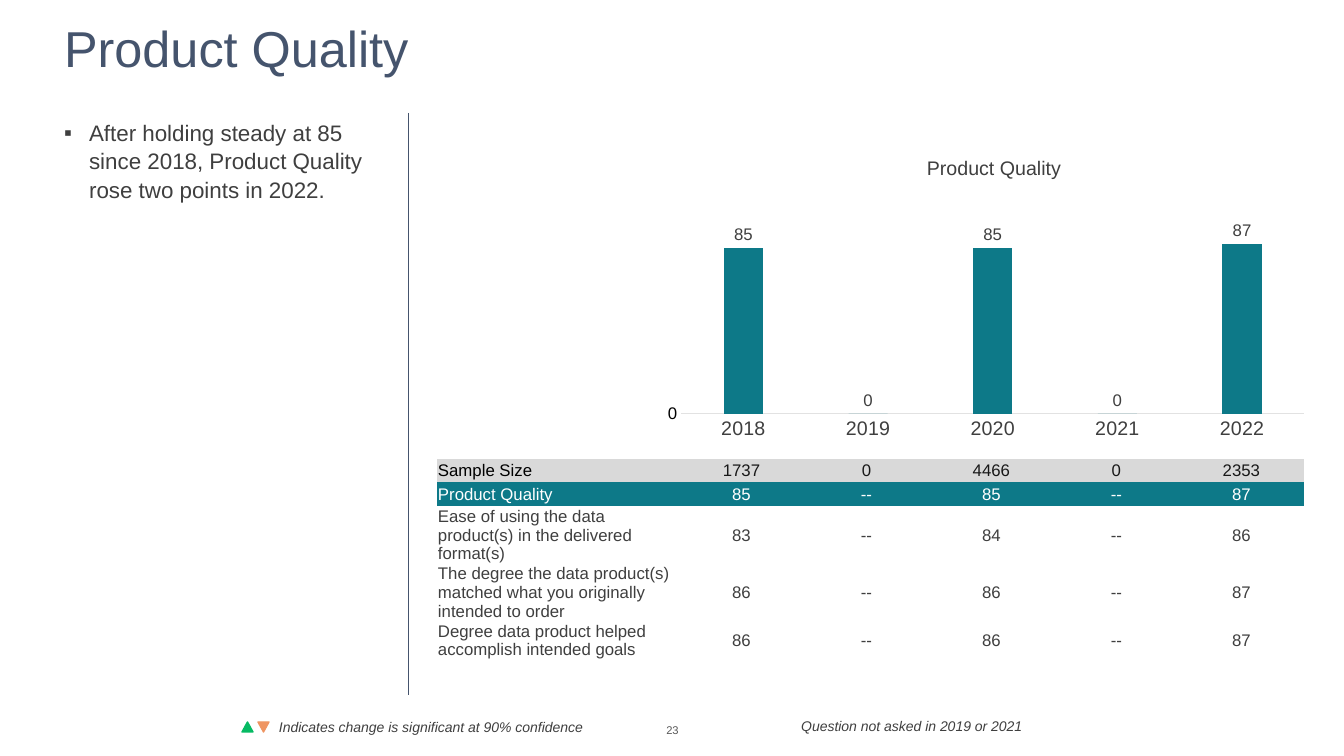
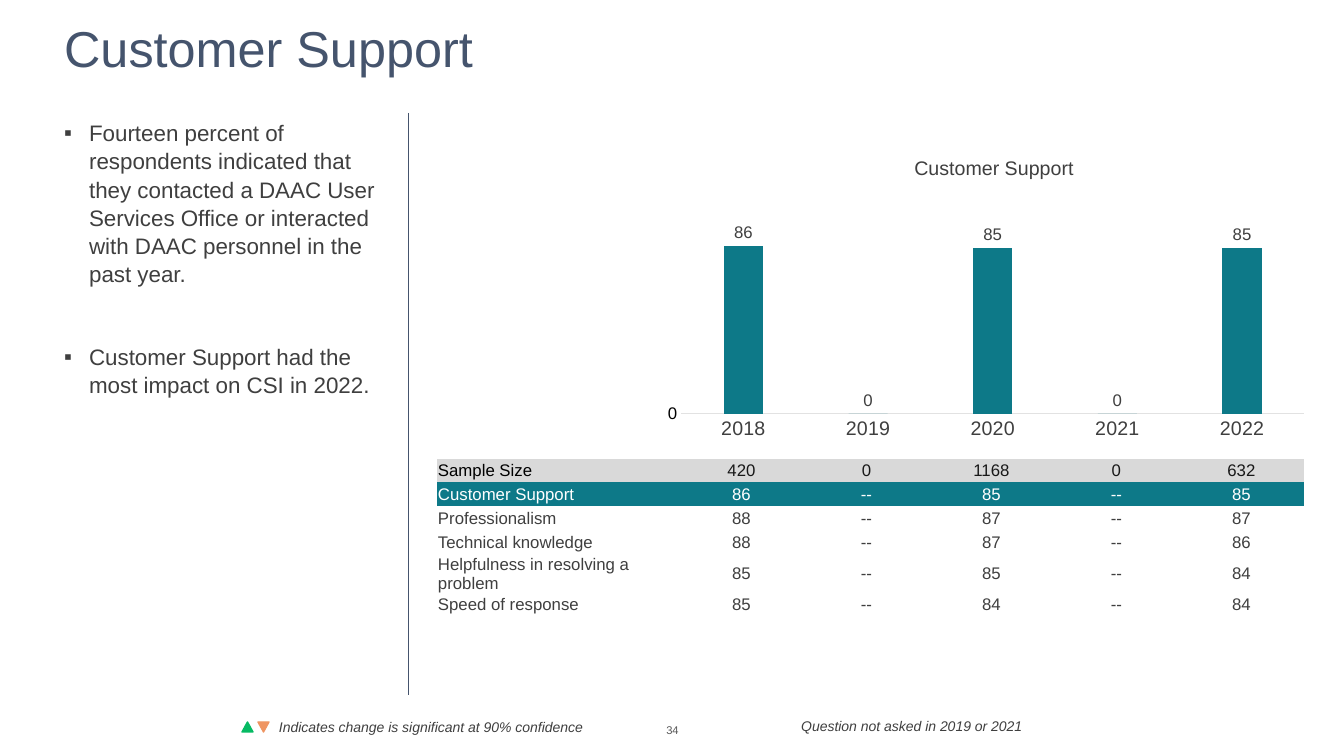
from lxml import etree
from pptx import Presentation
from pptx.chart.data import CategoryChartData
from pptx.dml.color import RGBColor
from pptx.enum.chart import XL_CHART_TYPE, XL_LABEL_POSITION, XL_TICK_MARK
from pptx.enum.shapes import MSO_CONNECTOR, MSO_SHAPE
from pptx.enum.text import MSO_ANCHOR, MSO_AUTO_SIZE, PP_ALIGN
from pptx.oxml.ns import qn
from pptx.util import Emu, Pt

COLUMN = XL_CHART_TYPE.COLUMN_CLUSTERED
OUTSIDE_END = XL_LABEL_POSITION.OUTSIDE_END
NO_TICK = XL_TICK_MARK.NONE
STRAIGHT = MSO_CONNECTOR.STRAIGHT
TRIANGLE = MSO_SHAPE.ISOSCELES_TRIANGLE
MIDDLE, TOP = MSO_ANCHOR.MIDDLE, MSO_ANCHOR.TOP
NO_AUTOFIT = MSO_AUTO_SIZE.NONE
LEFT, CENTER, RIGHT = PP_ALIGN.LEFT, PP_ALIGN.CENTER, PP_ALIGN.RIGHT

FONT = "Arial"
SLATE = RGBColor(0x45, 0x54, 0x6D)
CHARCOAL = RGBColor(0x3F, 0x3F, 0x3F)
GRAY = RGBColor(0x59, 0x59, 0x59)
LIGHT_GRAY = RGBColor(0xD9, 0xD9, 0xD9)
AXIS_GRAY = RGBColor(0xE2, 0xE2, 0xE2)
NEAR_BLACK = RGBColor(0x18, 0x18, 0x18)
BLACK = RGBColor(0, 0, 0)
WHITE = RGBColor(0xFF, 0xFF, 0xFF)
TEAL = RGBColor(0x0D, 0x79, 0x88)
GREEN = RGBColor(0x06, 0xBA, 0x63)
ORANGE = RGBColor(0xEF, 0x95, 0x62)

PX_PER_INCH = 100.8
YEARS = ["2018", "2019", "2020", "2021", "2022"]
PLOT_AREA = {"x": 0.29, "y": 0.295, "w": 0.65, "h": 0.48}
PLAIN_TABLE_STYLE = "{2D5ABB26-0587-4C30-8999-92F81FD0307C}"
LABEL_WIDTH, YEAR_WIDTH = 242, 125
SAMPLE_HEIGHT, SCORE_HEIGHT = 23, 24

TOPICS = [
    {
        "title": "Product Quality",
        "page": "23",
        "bullets": ["After holding steady at 85 since 2018, Product Quality rose two points in 2022."],
        "samples": (1737, 4466, 2353),
        "scores": (85, 85, 87),
        "details": [
            ("Ease of using the data product(s) in the delivered format(s)", (83, 84, 86)),
            ("The degree the data product(s) matched what you originally intended to order", (86, 86, 87)),
            ("Degree data product helped accomplish intended goals", (86, 86, 87)),
        ],
    },
    {
        "title": "Customer Support",
        "page": "34",
        "bullets": [
            "Fourteen percent of respondents indicated that they contacted a DAAC User Services Office "
            "or interacted with DAAC personnel in the past year.",
            "Customer Support had the most impact on CSI in 2022.",
        ],
        "samples": (420, 1168, 632),
        "scores": (86, 85, 85),
        "details": [
            ("Professionalism", (88, 87, 87)),
            ("Technical knowledge", (88, 87, 86)),
            ("Helpfulness in resolving a problem", (85, 85, 84)),
            ("Speed of response", (85, 84, 84)),
        ],
    },
]


def px(length):
    return Emu(round(length * 914400 / PX_PER_INCH))


def box(left, top, width, height):
    return px(left), px(top), px(width), px(height)


def every_year(values, missing):
    first, second, third = values
    return [first, missing, second, missing, third]


def style_font(font, size, color):
    font.name = FONT
    font.size = Pt(size)
    font.color.rgb = color


def add_run(paragraph, text, size, color, italic=False):
    run = paragraph.add_run()
    run.text = text
    style_font(run.font, size, color)
    if italic:
        run.font.italic = True


def add_text(slide, bounds, text, size, color=CHARCOAL, align=LEFT, italic=False):
    frame = slide.shapes.add_textbox(*box(*bounds)).text_frame
    frame.word_wrap = True
    paragraph = frame.paragraphs[0]
    paragraph.alignment = align
    add_run(paragraph, text, size, color, italic)


def prepare_layout(layout):
    places = ((54, 0, 1243, 102, MIDDLE), (54, 113, 347, 582, TOP))
    for placeholder, (*bounds, anchor) in zip(layout.placeholders, places):
        placeholder.left, placeholder.top, placeholder.width, placeholder.height = box(*bounds)
        placeholder.text_frame.vertical_anchor = anchor
        placeholder.text_frame.auto_size = NO_AUTOFIT


def fill_title(slide, text):
    paragraph = slide.shapes.title.text_frame.paragraphs[0]
    paragraph.alignment = LEFT
    paragraph.line_spacing = 0.9
    add_run(paragraph, text, 36, SLATE)


def add_bullet(paragraph):
    properties = paragraph._p.get_or_add_pPr()
    properties.set("marL", str(px(25)))
    properties.set("indent", str(-px(25)))
    color = etree.SubElement(properties, qn("a:buClr"))
    etree.SubElement(color, qn("a:srgbClr"), val=str(CHARCOAL))
    etree.SubElement(properties, qn("a:buFont"), typeface=FONT)
    etree.SubElement(properties, qn("a:buChar"), char="▪")


def fill_bullets(slide, bullets):
    frame = slide.placeholders[1].text_frame
    for index, text in enumerate(bullets):
        paragraph = frame.add_paragraph() if index else frame.paragraphs[0]
        add_bullet(paragraph)
        paragraph.line_spacing = 1.05
        paragraph.space_before = Pt(39 if index else 0)
        add_run(paragraph, text, 16, CHARCOAL)


def add_divider(slide):
    divider = slide.shapes.add_connector(STRAIGHT, px(408), px(113), px(408), px(695))
    divider.line.color.rgb = SLATE
    divider.line.width = Pt(0.5)
    etree.SubElement(divider.element.spPr, qn("a:effectLst"))


def place_plot(chart):
    plot_area = chart.element.find(".//" + qn("c:plotArea"))
    layout = plot_area.find(qn("c:layout"))
    if layout is None:
        layout = etree.Element(qn("c:layout"))
        plot_area.insert(0, layout)
    manual = etree.SubElement(layout, qn("c:manualLayout"))
    etree.SubElement(manual, qn("c:layoutTarget"), val="inner")
    for side in "xy":
        etree.SubElement(manual, qn(f"c:{side}Mode"), val="edge")
    for name, share in PLOT_AREA.items():
        etree.SubElement(manual, qn(f"c:{name}"), val=str(share))


def add_score_chart(slide, scores):
    data = CategoryChartData(number_format="0")
    data.categories = YEARS
    data.add_series("Series 1", every_year(scores, 0))
    chart = slide.shapes.add_chart(COLUMN, *box(403, 99, 959, 406), data).chart
    chart.has_legend = False
    chart.has_title = False
    style_font(chart.font, 12, CHARCOAL)
    place_plot(chart)

    plot = chart.plots[0]
    plot.vary_by_categories = False
    plot.gap_width = 219
    plot.overlap = -27
    fill = plot.series[0].format.fill
    fill.solid()
    fill.fore_color.rgb = TEAL
    plot.has_data_labels = True
    labels = plot.data_labels
    labels.show_value = True
    labels.position = OUTSIDE_END
    labels.number_format = "0"
    labels.number_format_is_linked = False
    style_font(labels.font, 12, CHARCOAL)

    years, values = chart.category_axis, chart.value_axis
    for axis, size, color in ((years, 14, CHARCOAL), (values, 12, BLACK)):
        axis.major_tick_mark = NO_TICK
        axis.minor_tick_mark = NO_TICK
        axis.has_major_gridlines = False
        style_font(axis.tick_labels.font, size, color)
    years.format.line.color.rgb = AXIS_GRAY
    years.format.line.width = Pt(0.75)
    values.format.line.fill.background()
    values.minimum_scale, values.maximum_scale, values.major_unit = 0, 100, 500
    values.tick_labels.number_format = "0"
    values.tick_labels.number_format_is_linked = False


def fill_cell(cell, text, color, background, align):
    cell.margin_left = cell.margin_top = cell.margin_right = px(1)
    cell.margin_bottom = 0
    cell.vertical_anchor = MIDDLE
    if background is None:
        cell.fill.background()
    else:
        cell.fill.solid()
        cell.fill.fore_color.rgb = background
    paragraph = cell.text_frame.paragraphs[0]
    paragraph.alignment = align
    add_run(paragraph, text, 12, color)


def add_score_table(slide, topic):
    rows = [
        ("Sample Size", every_year(topic["samples"], 0), BLACK, NEAR_BLACK, LIGHT_GRAY),
        (topic["title"], every_year(topic["scores"], "--"), WHITE, WHITE, TEAL),
    ]
    for label, scores in topic["details"]:
        rows.append((label, every_year(scores, "--"), CHARCOAL, CHARCOAL, None))
    widths = [LABEL_WIDTH] + [YEAR_WIDTH] * len(YEARS)
    heights = [SAMPLE_HEIGHT] + [SCORE_HEIGHT] * (len(rows) - 1)

    bounds = box(437, 459, sum(widths), sum(heights))
    graphic = slide.shapes.add_table(len(rows), len(widths), *bounds)
    graphic.element.find(".//" + qn("a:tableStyleId")).text = PLAIN_TABLE_STYLE
    table = graphic.table
    table.first_row = False
    table.horz_banding = False
    for column, width in zip(table.columns, widths):
        column.width = px(width)
    for index, (label, values, label_color, value_color, background) in enumerate(rows):
        table.rows[index].height = px(heights[index])
        fill_cell(table.cell(index, 0), label, label_color, background, LEFT)
        for column, value in enumerate(values, 1):
            fill_cell(table.cell(index, column), str(value), value_color, background, CENTER)


def add_triangle(slide, left, color, rotation):
    triangle = slide.shapes.add_shape(TRIANGLE, *box(left, 722, 11, 10))
    triangle.shadow.inherit = False
    triangle.rotation = rotation
    triangle.fill.solid()
    triangle.fill.fore_color.rgb = color
    triangle.line.color.rgb = color
    triangle.line.width = Pt(1)


def add_footer(slide, page):
    add_text(slide, (633, 718, 79, 24), page, 8, GRAY, CENTER)
    add_text(slide, (269, 714, 378, 27), "Indicates change is significant at 90% confidence", 10, italic=True)
    add_triangle(slide, 242, GREEN, 0)
    add_triangle(slide, 258, ORANGE, 180)
    add_text(slide, (654, 713, 378, 27), "Question not asked in 2019 or 2021", 10, align=RIGHT, italic=True)


def add_topic_slide(presentation, layout, topic):
    slide = presentation.slides.add_slide(layout)
    fill_title(slide, topic["title"])
    fill_bullets(slide, topic["bullets"])
    add_divider(slide)
    add_score_chart(slide, topic["scores"])
    add_score_table(slide, topic)
    add_text(slide, (685, 151, 618, 34), topic["title"], 14, align=CENTER)
    add_footer(slide, topic["page"])


def main():
    presentation = Presentation()
    presentation.slide_width = px(1344)
    presentation.slide_height = px(756)
    layout = presentation.slide_layouts[1]
    prepare_layout(layout)
    for topic in TOPICS:
        add_topic_slide(presentation, layout, topic)
    presentation.save("out.pptx")


if __name__ == "__main__":
    main()
